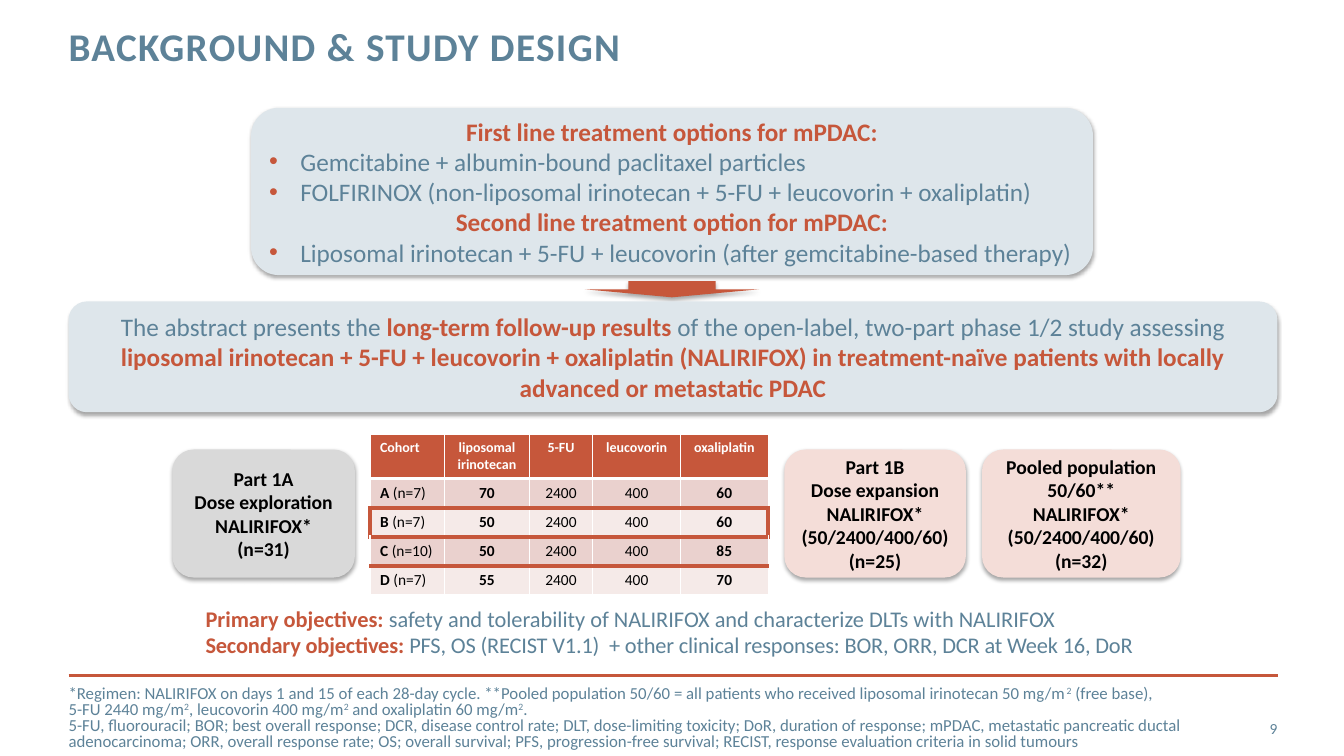
from lxml import etree
from pptx import Presentation
from pptx.dml.color import RGBColor
from pptx.enum.shapes import MSO_CONNECTOR, MSO_SHAPE
from pptx.enum.text import MSO_ANCHOR, MSO_AUTO_SIZE, PP_ALIGN
from pptx.oxml.ns import qn
from pptx.util import Inches, Pt

LEFT, CENTER, RIGHT = PP_ALIGN.LEFT, PP_ALIGN.CENTER, PP_ALIGN.RIGHT
TOP, MIDDLE = MSO_ANCHOR.TOP, MSO_ANCHOR.MIDDLE
ROUNDED, DOWN_ARROW = MSO_SHAPE.ROUNDED_RECTANGLE, MSO_SHAPE.DOWN_ARROW
STRAIGHT, NO_FIT = MSO_CONNECTOR.STRAIGHT, MSO_AUTO_SIZE.NONE

WIDTH, HEIGHT = 13.33, 7.5
MARGIN, CONTENT = 0.68, 11.99
BLUE, RUST, BLACK, WHITE = "5D8298", "C6573B", "000000", "FFFFFF"
PALE_BLUE, GREY, PINK = "DEE6EB", "D9D9D9", "F4DDD8"
BANDS = ["EAD1CE", "F5EAE8"]

# Run styles: colour, bold, superscript
STYLES = {
    "plain": (BLUE, False, False),
    "key": (RUST, True, False),
    "super": (BLUE, False, True),
    "strong": (BLACK, True, False),
    "dark": (BLACK, False, False),
    "head": (WHITE, True, False),
    "title": (BLUE, True, False),
}
# Letter spacing of paragraph layouts, in hundredths of a point
TRACKING = {"title": 100, "tight": -10}

# Each paragraph: its layout, then runs of (text, style)
TITLE = [("title", [("BACKGROUND & STUDY DESIGN", "title")])]
TREATMENTS = [
    ("center", [("First line treatment options for mPDAC:", "key")]),
    ("bullet", [("Gemcitabine + albumin-bound paclitaxel particles", "plain")]),
    ("bullet", [("FOLFIRINOX (non-liposomal irinotecan + 5-FU + leucovorin + oxaliplatin)", "plain")]),
    ("center", [("Second line treatment option for mPDAC:", "key")]),
    ("bullet", [("Liposomal irinotecan + 5-FU + leucovorin (after gemcitabine-based therapy)", "plain")]),
]
ABSTRACT = [("center", [
    ("The abstract presents the ", "plain"),
    ("long-term follow-up results ", "key"),
    ("of the open-label, two-part phase 1/2 study assessing ", "plain"),
    ("liposomal irinotecan + 5-FU + leucovorin + oxaliplatin (NALIRIFOX) in "
     "treatment-naïve patients with locally advanced or metastatic PDAC", "key"),
])]
OBJECTIVES = [
    ("left", [("Primary objectives:", "key"),
              (" safety and tolerability of NALIRIFOX and characterize DLTs with NALIRIFOX", "plain")]),
    ("tight", [("Secondary objectives:", "key"),
               (" PFS, OS (RECIST V1.1)  + other clinical responses: BOR, ORR, DCR at Week 16, DoR", "plain")]),
]
FOOTNOTE = [("left", [
    ("*Regimen: NALIRIFOX on days 1 and 15 of each 28-day cycle. **Pooled population 50/60 = "
     "all patients who received liposomal irinotecan 50 mg/m", "plain"),
    ("2", "super"), (" (free base), \n5-FU 2440 mg/m", "plain"),
    ("2", "super"), (", leucovorin 400 mg/m", "plain"),
    ("2", "super"), (" and oxaliplatin 60 mg/m", "plain"),
    ("2", "super"),
    (".\n5-FU, fluorouracil; BOR; best overall response; DCR, disease control rate; DLT, "
     "dose-limiting toxicity; DoR, duration of response; mPDAC, metastatic pancreatic ductal "
     "adenocarcinoma; ORR, overall response rate; OS; overall survival; PFS, progression-free "
     "survival; RECIST, response evaluation criteria in solid tumours", "plain"),
])]
# Study parts: left, width, fill, lines
PARTS = [
    (1.71, 1.81, GREY, ["Part 1A", "Dose exploration", "NALIRIFOX*", "(n=31)"]),
    (7.78, 1.8, PINK, ["Part 1B", "Dose expansion", "NALIRIFOX*", "(50/2400/400/60)", "(n=25)"]),
    (9.74, 1.97, PINK, ["Pooled population 50/60**", "NALIRIFOX*", "(50/2400/400/60)", "(n=32)"]),
]
DRUGS = ["Cohort", "liposomal irinotecan", "5-FU", "leucovorin", "oxaliplatin"]
COHORTS = [
    ("A", " (n=7)", "70", "2400", "400", "60"),
    ("B", " (n=7)", "50", "2400", "400", "60"),
    ("C", " (n=10)", "50", "2400", "400", "85"),
    ("D", " (n=7)", "55", "2400", "400", "70"),
]
BOLD_COLUMNS = (1, 4)
BOXED_ROW = 2
RUST_RULES = (1, 2, 3)  # rows with a rust line below
COLUMN_WIDTHS = [0.74, 0.84, 0.63, 0.87, 0.87]
ROW_HEIGHTS = [0.21] + [0.23] * len(COHORTS)


def rgb(color):
    return RGBColor.from_string(color)


def inches(*lengths):
    return [Inches(length) for length in lengths]


def add_xml(parent, tag, **attributes):
    return etree.SubElement(parent, qn(tag), attributes)


def add_bullet(para):
    props = para._p.get_or_add_pPr()
    props.set("marL", str(Inches(0.31)))
    props.set("indent", str(-Inches(0.31)))
    add_xml(add_xml(props, "a:buClr"), "a:srgbClr", val=RUST)
    add_xml(props, "a:buFont", typeface="Arial")
    add_xml(props, "a:buChar", char="•")


def write(frame, paragraphs, size=14, anchor=TOP, inset=None, spacing=None):
    """Set up a text frame and fill it with styled paragraphs."""
    frame.word_wrap = True
    frame.auto_size = NO_FIT
    frame.vertical_anchor = anchor
    if inset is not None:
        frame.margin_left = frame.margin_right = Inches(inset)
        frame.margin_top = frame.margin_bottom = Inches(inset)
    write_paragraphs(frame, paragraphs, size, spacing)


def write_paragraphs(frame, paragraphs, size, spacing=None):
    for index, (layout, runs) in enumerate(paragraphs):
        para = frame.add_paragraph() if index else frame.paragraphs[0]
        if layout == "bullet":
            add_bullet(para)
        para.alignment = {"center": CENTER, "right": RIGHT}.get(layout, LEFT)
        if spacing:
            para.line_spacing = spacing
        for text, style in runs:
            color, bold, raised = STYLES[style]
            for line, part in enumerate(text.split("\n")):
                if line:
                    para.add_line_break()
                span = para.add_run()
                span.text = part
                span.font.name, span.font.size = "Calibri", Pt(size)
                span.font.bold = bold
                span.font.color.rgb = rgb(color)
                if raised:
                    span._r.get_or_add_rPr().set("baseline", "30000")
                if layout in TRACKING:
                    span._r.get_or_add_rPr().set("spc", str(TRACKING[layout]))


def add_panel(page, kind, place, fill, paragraphs=(), size=14):
    """Add a filled shape with a soft shadow below it."""
    panel = page.shapes.add_shape(kind, *inches(*place))
    panel.fill.solid()
    panel.fill.fore_color.rgb = rgb(fill)
    panel.line.fill.background()
    panel.shadow.inherit = False
    effects = panel._element.spPr.find(qn("a:effectLst"))
    shadow = add_xml(effects, "a:outerShdw", blurRad=str(Pt(3.1)), dist=str(Pt(1.8)),
                     dir="5400000", rotWithShape="0")
    add_xml(add_xml(shadow, "a:srgbClr", val=BLACK), "a:alpha", val="35000")
    if paragraphs:
        write(panel.text_frame, paragraphs, size=size, anchor=MIDDLE)


def add_text(page, place, paragraphs, **form):
    write(page.shapes.add_textbox(*inches(*place)).text_frame, paragraphs, **form)


def set_borders(cell, row, column):
    """White grid, with rust rules and a rust frame around the boxed row."""
    boxed = row == BOXED_ROW
    rust = {
        "L": boxed and column == 0,
        "R": boxed and column == len(DRUGS) - 1,
        "T": row - 1 in RUST_RULES,
        "B": row in RUST_RULES,
    }
    for side, is_rust in rust.items():
        thick = is_rust or (row == 0 and side == "B")
        line = add_xml(cell._tc.get_or_add_tcPr(), "a:ln" + side, w=str(Pt(3 if thick else 1)))
        add_xml(add_xml(line, "a:solidFill"), "a:srgbClr", val=RUST if is_rust else WHITE)


def add_doses(page):
    rows = [[[(drug, "head")] for drug in DRUGS]]
    for name, count, *doses in COHORTS:
        rows.append([[(name, "strong"), (count, "dark")]] + [
            [(dose, "strong" if column in BOLD_COLUMNS else "dark")]
            for column, dose in enumerate(doses, 1)])
    place = inches(3.67, 4.31, sum(COLUMN_WIDTHS), sum(ROW_HEIGHTS))
    table = page.shapes.add_table(len(rows), len(DRUGS), *place).table
    for column, width in enumerate(COLUMN_WIDTHS):
        table.columns[column].width = Inches(width)
    for row, height in enumerate(ROW_HEIGHTS):
        table.rows[row].height = Inches(height)
        for column, runs in enumerate(rows[row]):
            cell = table.cell(row, column)
            set_borders(cell, row, column)
            cell.fill.solid()
            cell.fill.fore_color.rgb = rgb(BANDS[(row - 1) % 2] if row else RUST)
            cell.vertical_anchor = MIDDLE if row and column else TOP
            write_paragraphs(cell.text_frame, [("center" if column else "left", runs)],
                             11 if row else 10)


def main():
    deck = Presentation()
    deck.slide_width, deck.slide_height = inches(WIDTH, HEIGHT)
    page = deck.slides.add_slide(deck.slide_layouts[5])
    title = page.shapes.title
    title.left, title.top, title.width, title.height = inches(MARGIN, 0.27, 9.56, 0.88)
    write(title.text_frame, TITLE, size=28, inset=0, spacing=Pt(30))

    rule = page.shapes.add_connector(STRAIGHT, *inches(MARGIN, 6.7, MARGIN + 12, 6.7))
    rule.line.color.rgb, rule.line.width = rgb(RUST), Pt(2)
    add_xml(rule._element.spPr, "a:effectLst")

    add_panel(page, ROUNDED, (2.49, 1.07, 8.35, 1.66), PALE_BLUE, TREATMENTS, 18)
    add_text(page, (11.81, 7.03, 0.86, 0.4), [("right", [("9", "plain")])],
             size=11, anchor=MIDDLE, inset=0)
    add_text(page, (MARGIN, 6.93, 11.82, 0.4), FOOTNOTE,
             size=12, anchor=MIDDLE, inset=0, spacing=0.8)
    for left, width, fill, lines in PARTS:
        add_panel(page, ROUNDED, (left, 4.46, width, 1.27), fill,
                  [("center", [(line, "strong")]) for line in lines])
    add_doses(page)
    add_text(page, (1.94, 5.95, 9.48, 0.64), OBJECTIVES, size=16)
    add_panel(page, DOWN_ARROW, (5.8, 2.79, 1.73, 0.16), RUST)
    add_panel(page, ROUNDED, (MARGIN, 2.99, CONTENT, 1.1), PALE_BLUE, ABSTRACT, 18)
    deck.save("out.pptx")


if __name__ == "__main__":
    main()
